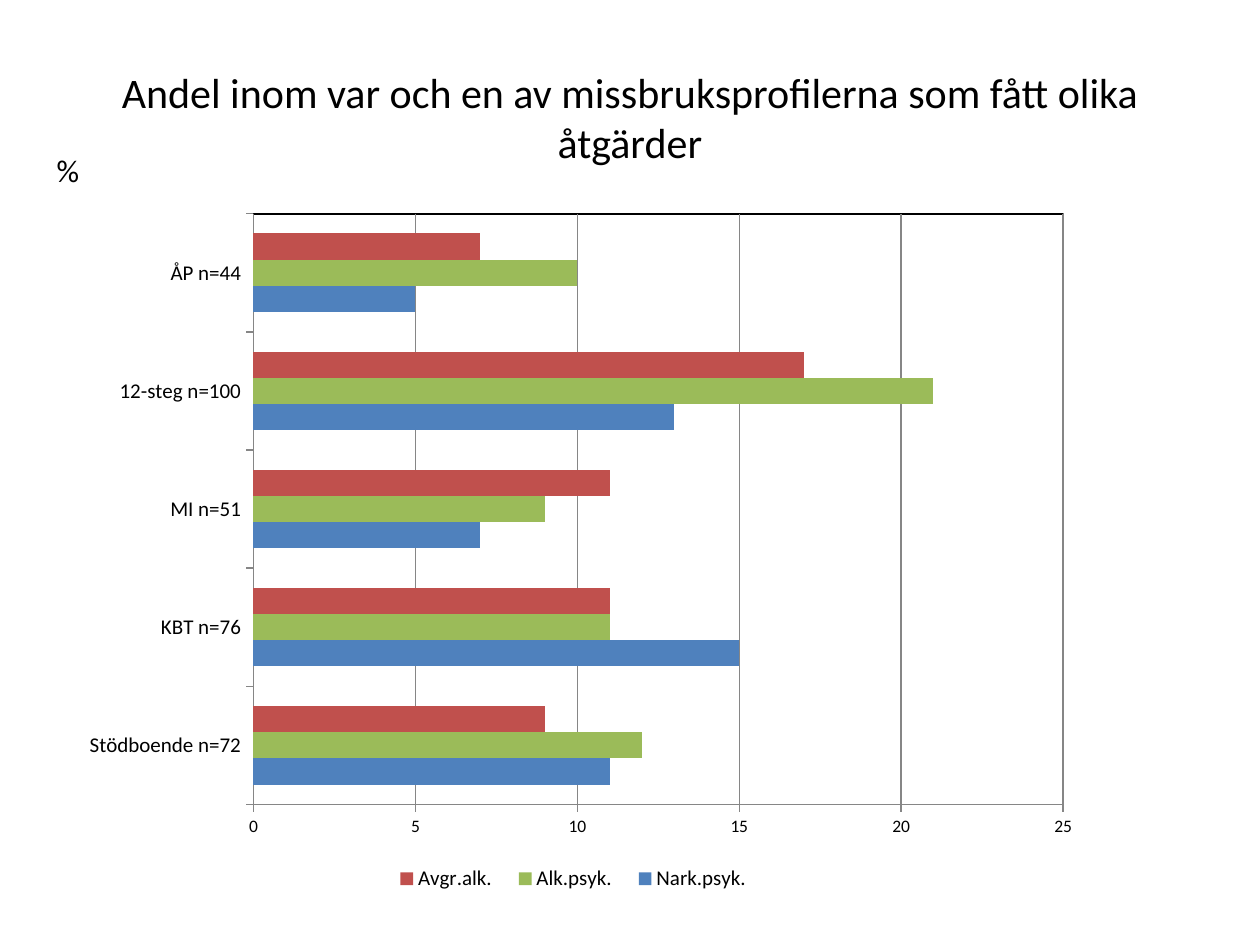
from pptx import Presentation
from pptx.chart.data import CategoryChartData
from pptx.dml.color import RGBColor
from pptx.enum.chart import XL_CHART_TYPE as ChartType, XL_LEGEND_POSITION as LegendPosition
from pptx.enum.chart import XL_TICK_MARK as TickMark
from pptx.enum.text import MSO_ANCHOR as Anchor, MSO_AUTO_SIZE as AutoSize, PP_ALIGN as Align
from pptx.oxml import parse_xml
from pptx.oxml.ns import nsdecls, qn
from pptx.util import Inches, Pt

BLACK = RGBColor(0x00, 0x00, 0x00)
GREY = RGBColor(0x86, 0x86, 0x86)
BLUE = RGBColor(0x4F, 0x81, 0xBD)
GREEN = RGBColor(0x9B, 0xBB, 0x59)
RED = RGBColor(0xC0, 0x50, 0x4D)
FONT = "Calibri"

CATEGORIES = ["Stödboende n=72", "KBT n=76", "MI n=51", "12-steg n=100", "ÅP n=44"]
SERIES = [
    ("Nark.psyk.", [11, 15, 7, 13, 5], BLUE, 0),
    ("Alk.psyk.", [12, 11, 9, 21, 10], GREEN, 2),
    ("Avgr.alk.", [9, 11, 11, 17, 7], RED, 1),
]


def style_font(font, size):
    font.name = FONT
    font.size = Pt(size)
    font.color.rgb = BLACK


def set_layout(parent, position, target, x, y, w, h):
    for old in parent.findall(qn("c:layout")):
        parent.remove(old)
    inner = '<c:layoutTarget val="inner"/>' if target else ""
    modes = '<c:xMode val="edge"/><c:yMode val="edge"/>'
    shares = "".join(f'<c:{key} val="{share}"/>' for key, share in zip("xywh", (x, y, w, h)))
    parent.insert(position, parse_xml(
        f'<c:layout {nsdecls("c")}><c:manualLayout>{inner}{modes}{shares}</c:manualLayout></c:layout>'))


deck = Presentation()
deck.slide_width, deck.slide_height = Inches(10), Inches(7.5)
width, height = deck.slide_width, deck.slide_height
margin = int(width * 0.05)
page = deck.slides.add_slide(deck.slide_layouts[5])

title = page.shapes.title
title.left, title.top = margin, int(height * 0.04)
title.width, title.height = width - 2 * margin, Inches(1.25)
title.text_frame.vertical_anchor = Anchor.MIDDLE
para = title.text_frame.paragraphs[0]
para.alignment = Align.CENTER
span = para.add_run()
span.text = "Andel inom var och en av missbruksprofilerna som fått olika åtgärder"
style_font(span.font, 24)

data = CategoryChartData()
data.categories = CATEGORIES
for name, values, color, order in SERIES:
    data.add_series(name, values)
chart = page.shapes.add_chart(
    ChartType.BAR_CLUSTERED, margin, Inches(1.39), width - 2 * margin, Inches(5.91), data).chart
chart.has_title = False
style_font(chart.font, 10)
plot = chart.plots[0]
plot.gap_width = 150
plot.overlap = 0
plot.vary_by_categories = False
for series, (name, values, color, order) in zip(list(plot.series), SERIES):
    series.format.fill.solid()
    series.format.fill.fore_color.rgb = color
    series._element.find(qn("c:order")).set("val", str(order))

for axis, size in ((chart.category_axis, 12), (chart.value_axis, 10)):
    axis.major_tick_mark = TickMark.OUTSIDE
    axis.minor_tick_mark = TickMark.NONE
    axis.format.line.color.rgb = GREY
    style_font(axis.tick_labels.font, size)
scale = chart.value_axis
scale.minimum_scale, scale.maximum_scale, scale.major_unit = 0, 25, 5
scale.has_major_gridlines = True
scale.major_gridlines.format.line.color.rgb = GREY

chart.has_legend = True
legend = chart.legend
legend.position = LegendPosition.RIGHT
legend.include_in_layout = False
style_font(legend.font, 12)
set_layout(legend._element, 1, False, 0.28, 0.92, 0.34, 0.05)

plot_area = chart._chartSpace.chart.plotArea
set_layout(plot_area, 0, True, 0.168, 0.052, 0.714, 0.793)
plot_area.append(parse_xml(
    f'<c:spPr {nsdecls("c", "a")}><a:noFill/><a:ln w="9525"><a:solidFill>'
    f'<a:srgbClr val="{BLACK}"/></a:solidFill></a:ln></c:spPr>'))

box = page.shapes.add_textbox(Inches(0.35), Inches(1.15), Inches(0.38), Inches(0.4))
box.text_frame.word_wrap = False
box.text_frame.auto_size = AutoSize.SHAPE_TO_FIT_TEXT
span = box.text_frame.paragraphs[0].add_run()
span.text = "%"
style_font(span.font, 18)

deck.save("out.pptx")
